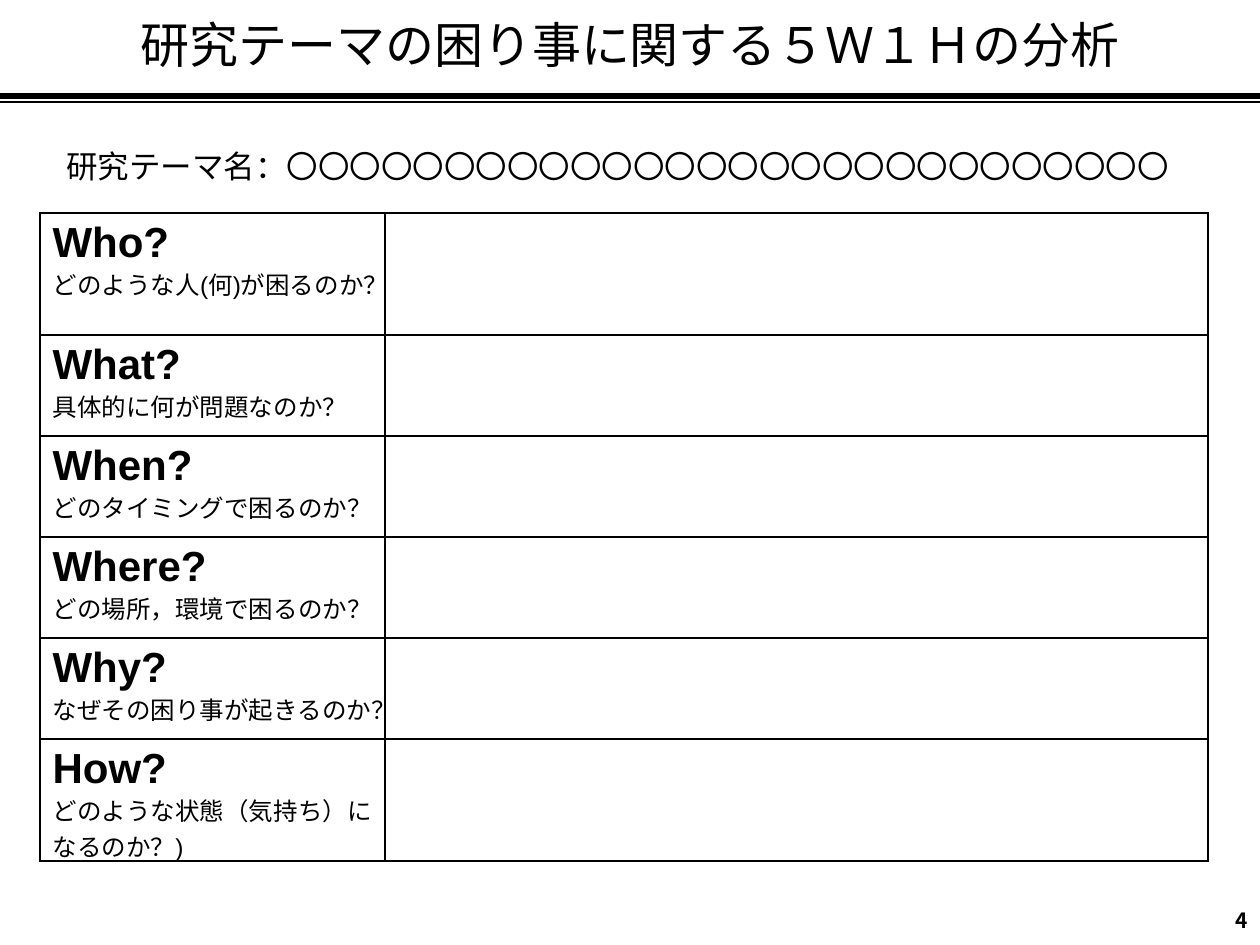
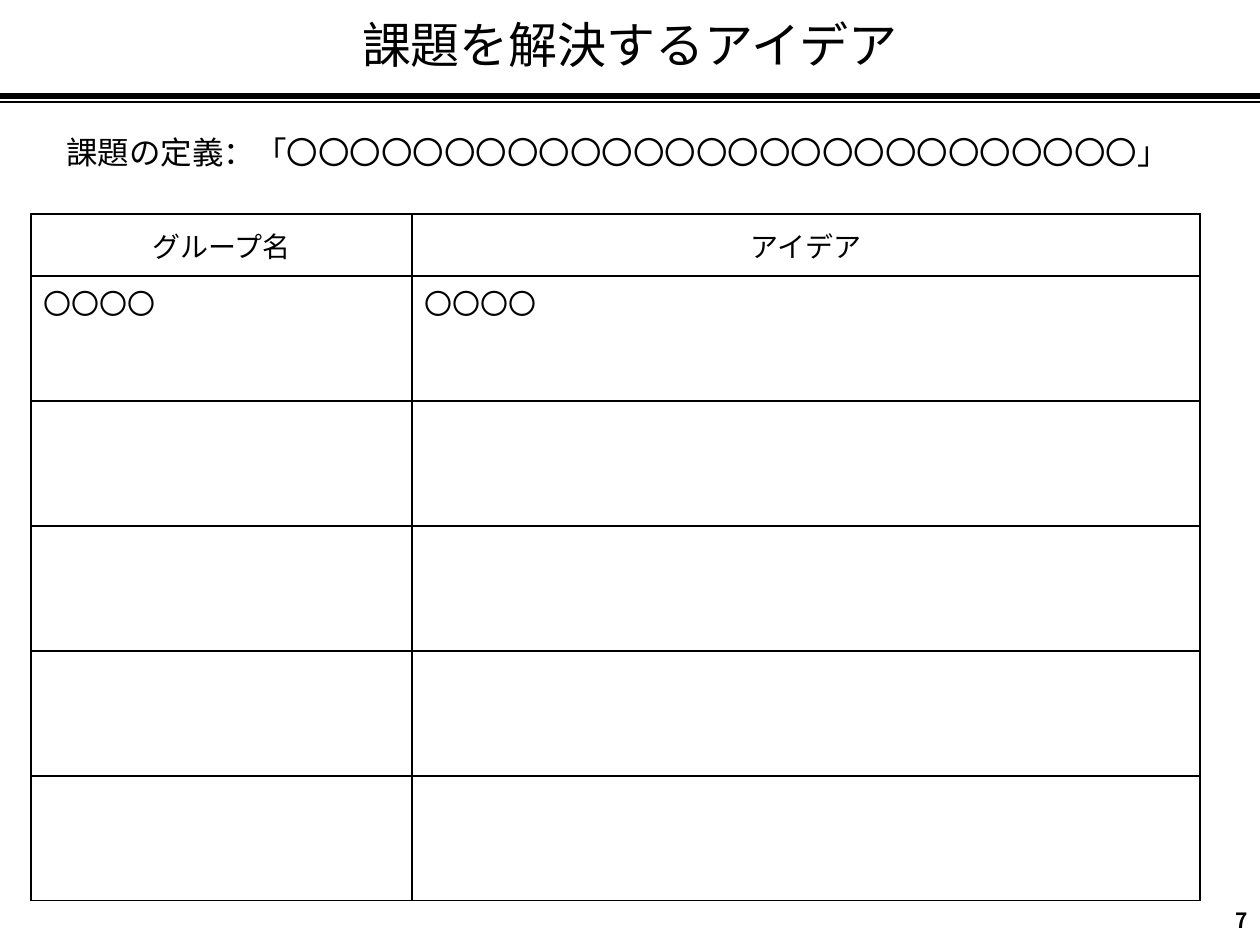
from lxml.etree import SubElement
from pptx import Presentation
from pptx.dml.color import RGBColor
from pptx.enum.shapes import MSO_CONNECTOR as CONN
from pptx.enum.text import MSO_ANCHOR as ANCHOR, PP_ALIGN as ALIGN
from pptx.oxml.ns import qn
from pptx.util import Emu, Pt

BLACK = RGBColor(0, 0, 0)
SANS, LATIN = "Noto Sans CJK JP", "Arial"
SCALE = 914400 / 126
W, H = 1260, 945
RULES = [(96, 3), (102, 1)]

QUESTIONS = [
    ("Who?", "どのような人(何)が困るのか？"),
    ("What?", "具体的に何が問題なのか？"),
    ("When?", "どのタイミングで困るのか？"),
    ("Where?", "どの場所，環境で困るのか？"),
    ("Why?", "なぜその困り事が起きるのか？"),
    ("How?", "どのような状態（気持ち）になるのか？)"),
]
IDEA_HEAD = ["グループ名", "アイデア"]
IDEA_SAMPLE = ["〇〇〇〇", "〇〇〇〇"]
IDEA_ROWS = 5

ANALYSIS = dict(
    title="研究テーマの困り事に関する５Ｗ１Ｈの分析", number="4",
    lead="研究テーマ名：〇〇〇〇〇〇〇〇〇〇〇〇〇〇〇〇〇〇〇〇〇〇〇〇〇〇〇〇",
    lead_box=(54, 141, 1139, 50))
IDEAS = dict(
    title="課題を解決するアイデア", number="7",
    lead="課題の定義：「〇〇〇〇〇〇〇〇〇〇〇〇〇〇〇〇〇〇〇〇〇〇〇〇〇〇〇」",
    lead_box=(54, 127, 1171, 50))


def px(n):
    return Emu(round(n * SCALE))


def add_run(p, text, size, bold=False, font=SANS):
    r = p.add_run()
    r.text = text
    f = r.font
    f.size, f.bold, f.name = Pt(size), bold, font
    f.color.rgb = BLACK
    SubElement(r._r.get_or_add_rPr(), qn("a:ea"), typeface=SANS)


def add_text(s, box, text, size, bold=False, align=ALIGN.LEFT, anchor=ANCHOR.TOP, wrap=True):
    tf = s.shapes.add_textbox(*map(px, box)).text_frame
    tf.word_wrap, tf.vertical_anchor = wrap, anchor
    p = tf.paragraphs[0]
    p.alignment = align
    add_run(p, text, size, bold)


def add_rule(s, y, width):
    line = s.shapes.add_connector(CONN.STRAIGHT, 0, px(y), px(W), px(y))
    line.line.color.rgb, line.line.width = BLACK, Pt(width)
    SubElement(line._element.spPr, qn("a:effectLst"))


def add_slide(prs, title, number, lead, lead_box):
    s = prs.slides.add_slide(prs.slide_layouts[5])
    sp = s.shapes.title
    sp.left, sp.top, sp.width, sp.height = map(px, (0, 0, W, RULES[0][0]))
    tf = sp.text_frame
    tf.vertical_anchor = ANCHOR.MIDDLE
    p = tf.paragraphs[0]
    p.alignment, p.line_spacing = ALIGN.CENTER, 0.9
    add_run(p, title, 28)
    for y, width in RULES:
        add_rule(s, y, width)
    add_text(s, lead_box, lead, 18, wrap=False)
    add_text(s, (1200, 895, 60, 50), number, 12, True, ALIGN.RIGHT, ANCHOR.MIDDLE)
    return s


def style_cell(cell):
    tcPr = cell._tc.get_or_add_tcPr()
    for side in ("lnL", "lnR", "lnT", "lnB"):
        ln = SubElement(tcPr, qn(f"a:{side}"), w=str(Pt(1)))
        fill = SubElement(ln, qn("a:solidFill"))
        SubElement(fill, qn("a:srgbClr"), val=str(BLACK))
    cell.fill.background()


def add_grid(s, left, top, cols, rows):
    box = map(px, (left, top, sum(cols), sum(rows)))
    table = s.shapes.add_table(len(rows), len(cols), *box).table
    table.first_row = table.horz_banding = False
    for col, width in zip(table.columns, cols):
        col.width = px(width)
    for row, height in zip(table.rows, rows):
        row.height = px(height)
    for cell in table.iter_cells():
        style_cell(cell)
    return table


def build_analysis(prs):
    s = add_slide(prs, **ANALYSIS)
    table = add_grid(s, 40, 213, [345, 823], [101] * len(QUESTIONS))
    for i, (word, question) in enumerate(QUESTIONS):
        tf = table.cell(i, 0).text_frame
        add_run(tf.paragraphs[0], word, 24, True, LATIN)
        add_run(tf.add_paragraph(), question, 14, font=LATIN)


def build_ideas(prs):
    s = add_slide(prs, **IDEAS)
    table = add_grid(s, 31, 214, [381, 788], [62] + [125] * IDEA_ROWS)
    for j, (head, sample) in enumerate(zip(IDEA_HEAD, IDEA_SAMPLE)):
        cell = table.cell(0, j)
        cell.vertical_anchor = ANCHOR.MIDDLE
        p = cell.text_frame.paragraphs[0]
        p.alignment = ALIGN.CENTER
        add_run(p, head, 16)
        add_run(table.cell(1, j).text_frame.paragraphs[0], sample, 16)


def main():
    prs = Presentation()
    prs.slide_width, prs.slide_height = px(W), px(H)
    build_analysis(prs)
    build_ideas(prs)
    prs.save("out.pptx")


if __name__ == "__main__":
    main()
